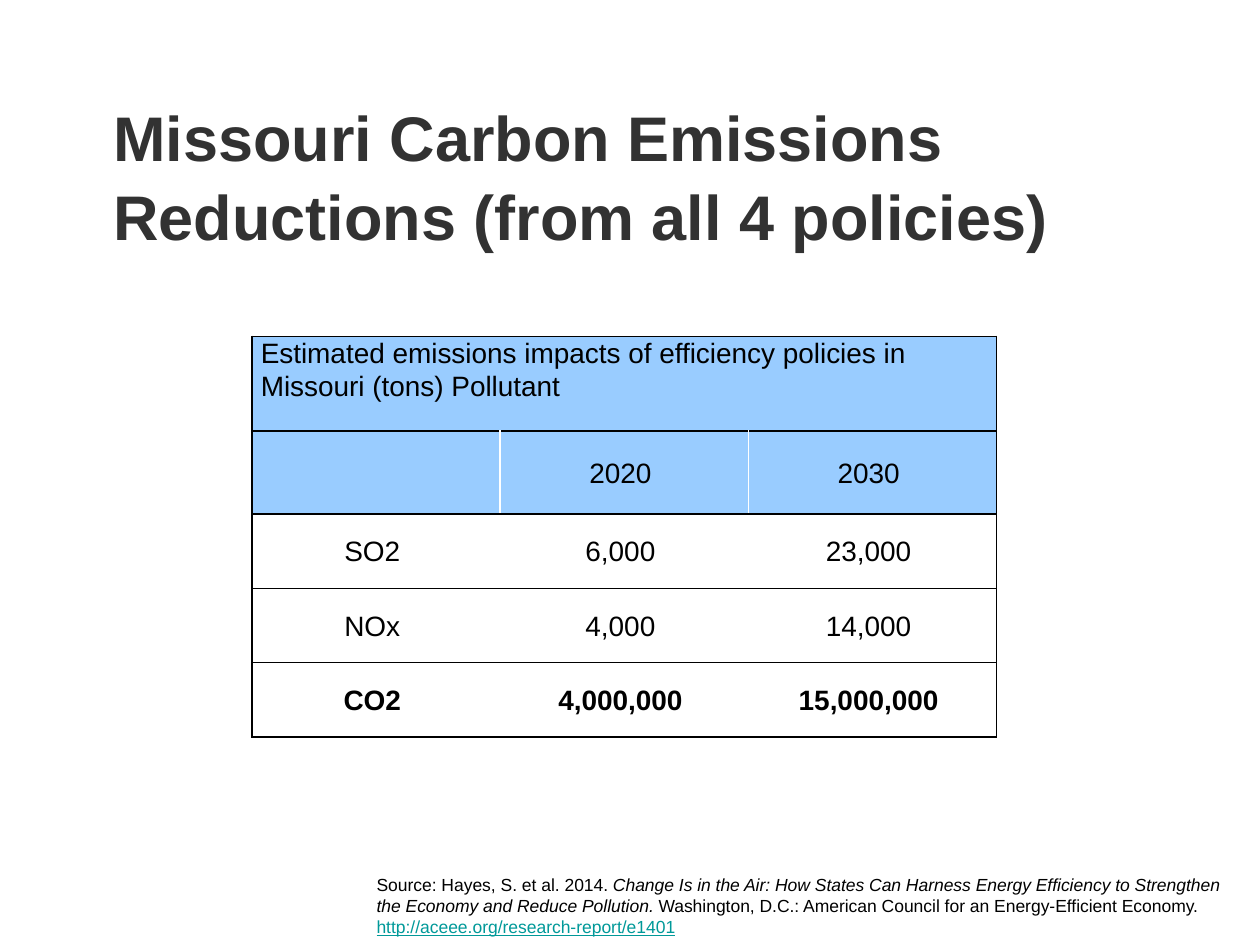
from typing import NamedTuple

from lxml import etree
from pptx import Presentation
from pptx.dml.color import RGBColor
from pptx.enum.text import MSO_ANCHOR, MSO_AUTO_SIZE, PP_ALIGN
from pptx.oxml.ns import qn
from pptx.util import Inches, Pt

MIDDLE, TOP = MSO_ANCHOR.MIDDLE, MSO_ANCHOR.TOP
CENTER, LEFT = PP_ALIGN.CENTER, PP_ALIGN.LEFT
NO_AUTOFIT = MSO_AUTO_SIZE.NONE

BLACK = RGBColor(0x00, 0x00, 0x00)
WHITE = RGBColor(0xFF, 0xFF, 0xFF)
CHARCOAL = RGBColor(0x32, 0x32, 0x32)
SKY = RGBColor(0x99, 0xCC, 0xFF)
TEAL = RGBColor(0x00, 0x99, 0x99)
FONT = "Arial"


class EmissionsRow(NamedTuple):
    values: tuple[str, ...]
    height: float
    fill: RGBColor = WHITE
    bold: bool = False


class SourcePart(NamedTuple):
    text: str
    italic: bool = False
    underline: bool = False
    color: RGBColor = BLACK


CAPTION = "Estimated emissions impacts of efficiency policies in Missouri (tons) Pollutant"
ROWS = (
    EmissionsRow((CAPTION, "", ""), 0.75, SKY),
    EmissionsRow(("", "2020 ", "2030 "), 0.66, SKY),
    EmissionsRow(("SO2 ", "6,000 ", "23,000 "), 0.59),
    EmissionsRow(("NOx ", "4,000 ", "14,000 "), 0.59),
    EmissionsRow(("CO2 ", "4,000,000 ", "15,000,000 "), 0.59, bold=True),
)
COLUMN_WIDTH = 1.97
SOURCE = (
    SourcePart("Source: Hayes, S. et al. 2014. "),
    SourcePart("Change Is in the Air: How States Can Harness Energy Efficiency "
               "to Strengthen the Economy and Reduce Pollution. ", italic=True),
    SourcePart("Washington, D.C.: American Council for an Energy-Efficient Economy. "),
    SourcePart("http://aceee.org/research-report/e1401", underline=True, color=TEAL),
    SourcePart(" "),
)


def style_font(font, size: float, color: RGBColor, bold: bool = False) -> None:
    font.name, font.size, font.bold = FONT, Pt(size), bold
    font.color.rgb = color


def set_borders(cell, left: RGBColor, right: RGBColor) -> None:
    """Draw 1 pt borders; the top and bottom are always black."""
    properties = cell._tc.get_or_add_tcPr()
    sides = (("a:lnL", left), ("a:lnR", right), ("a:lnT", BLACK), ("a:lnB", BLACK))
    for position, (tag, color) in enumerate(sides):
        line = etree.Element(qn(tag), w=str(Pt(1)))
        fill = etree.SubElement(line, qn("a:solidFill"))
        etree.SubElement(fill, qn("a:srgbClr"), val=str(color))
        properties.insert(position, line)


def fill_cell(cell, text: str, row: EmissionsRow, is_caption: bool) -> None:
    cell.fill.solid()
    cell.fill.fore_color.rgb = row.fill
    cell.margin_left = cell.margin_right = Inches(0.07)
    cell.margin_top = cell.margin_bottom = 0
    cell.vertical_anchor = TOP if is_caption else MIDDLE
    paragraph = cell.text_frame.paragraphs[0]
    paragraph.text = text
    paragraph.alignment = LEFT if is_caption else CENTER
    paragraph.line_spacing = 1.07
    paragraph.space_after = Pt(8)
    style_font(paragraph.font, 16, BLACK, row.bold)
    for run in paragraph.runs:
        style_font(run.font, 16, BLACK, row.bold)


def add_title(slide) -> None:
    title = slide.shapes.title
    title.left, title.top = Inches(0.83), Inches(0.67)
    title.width, title.height = Inches(8.67), Inches(1.25)
    frame = title.text_frame
    frame.text = "Missouri Carbon Emissions Reductions (from all 4 policies)"
    frame.auto_size, frame.vertical_anchor, frame.word_wrap = NO_AUTOFIT, TOP, True
    frame.margin_left, frame.margin_top = Inches(0.07), Inches(0.08)
    paragraph = frame.paragraphs[0]
    paragraph.alignment, paragraph.line_spacing = LEFT, 1.05
    style_font(paragraph.runs[0].font, 36, CHARCOAL, bold=True)


def add_emissions_table(slide) -> None:
    column_count = len(ROWS[0].values)
    last = column_count - 1
    table = slide.shapes.add_table(
        len(ROWS), column_count, Inches(2), Inches(2.67),
        Inches(COLUMN_WIDTH * column_count), Inches(sum(row.height for row in ROWS)),
    ).table
    table.horz_banding = table.first_row = False
    for column in table.columns:
        column.width = Inches(COLUMN_WIDTH)
    for r, row in enumerate(ROWS):
        table.rows[r].height = Inches(row.height)
        is_caption = r == 0
        for c, text in enumerate(row.values):
            cell = table.cell(r, c)
            fill_cell(cell, text, row, is_caption)
            set_borders(cell,
                        left=BLACK if is_caption or c == 0 else WHITE,
                        right=BLACK if is_caption or c == last else WHITE)
    table.cell(0, 0).merge(table.cell(0, last))


def add_source(slide) -> None:
    box = slide.shapes.add_textbox(Inches(2.89), Inches(6.89), Inches(7.08), Inches(0.61))
    box.text_frame.word_wrap = True
    paragraph = box.text_frame.paragraphs[0]
    for part in SOURCE:
        run = paragraph.add_run()
        run.text = part.text
        style_font(run.font, 10, part.color)
        run.font.italic, run.font.underline = part.italic, part.underline


def main() -> None:
    presentation = Presentation()
    presentation.slide_width, presentation.slide_height = Inches(10), Inches(7.5)
    title_only = presentation.slide_layouts[5]
    slide = presentation.slides.add_slide(title_only)
    add_title(slide)
    add_emissions_table(slide)
    add_source(slide)
    presentation.save("out.pptx")


if __name__ == "__main__":
    main()
